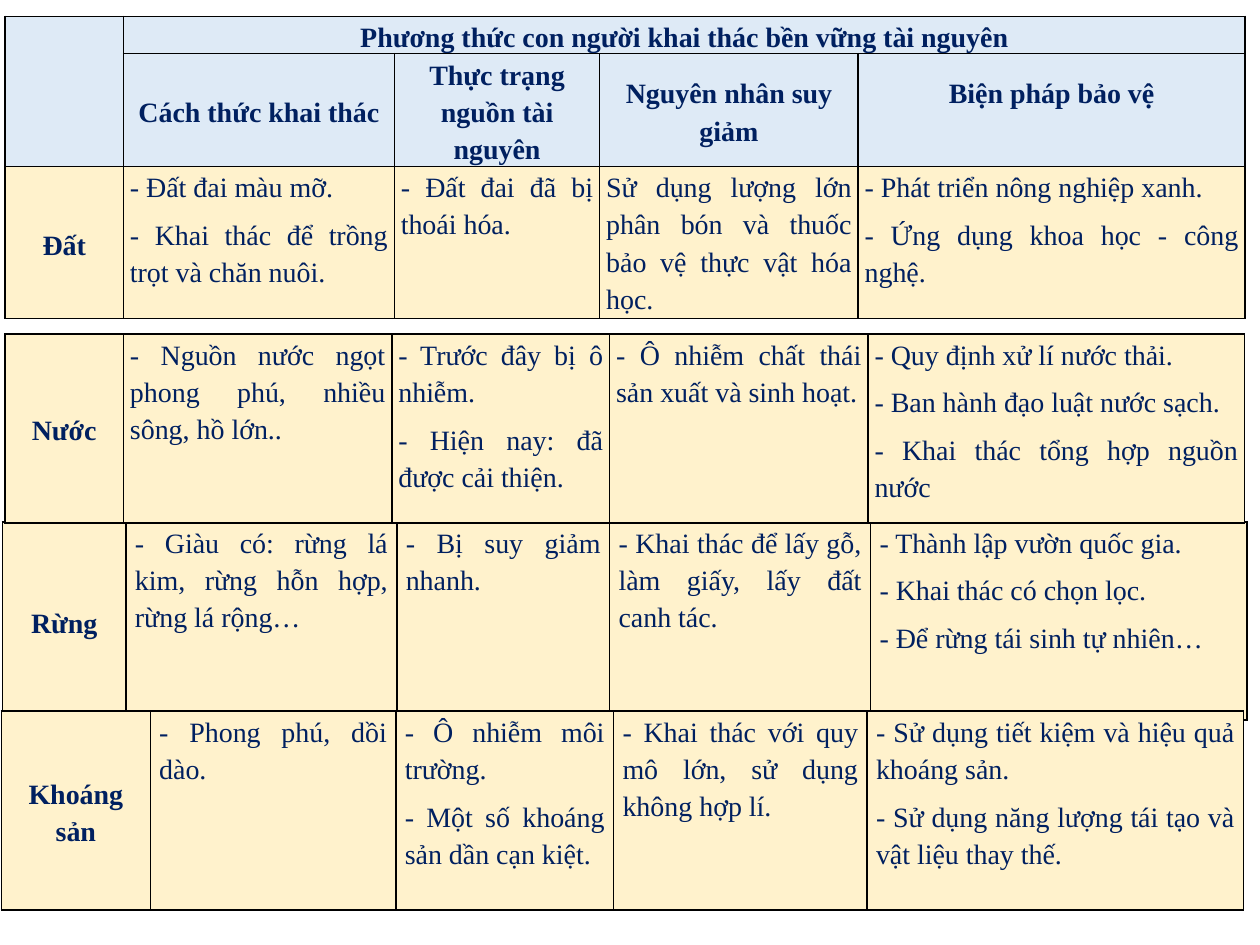
import pptx
import pptx.util
import pptx.dml.color
import pptx.enum.text
import pptx.oxml
import pptx.oxml.ns

Cm, Pt = pptx.util.Cm, pptx.util.Pt
ALIGN, ANCHOR = pptx.enum.text.PP_ALIGN, pptx.enum.text.MSO_ANCHOR
HEAD, BODY = "DEEAF6", "FFF2CC"
FONT = {"name": "Times New Roman", "size": Pt(16)}
PARA = {"line_spacing": 1.2, "space_before": Pt(6)}


def color(text):
    return pptx.dml.color.RGBColor.from_string(text)


def format_cell(cell, text, fill, strong, middle, inset):
    margins = {"margin_left": Cm(inset), "margin_right": Cm(inset), "margin_top": 0, "margin_bottom": 0}
    for name, value in margins.items():
        setattr(cell, name, value)
    cell.vertical_anchor = ANCHOR.MIDDLE if middle else ANCHOR.TOP
    tf = cell.text_frame
    tf.text = text
    for p in tf.paragraphs:
        p.alignment = ALIGN.CENTER if strong else ALIGN.JUSTIFY
        for name, value in PARA.items():
            setattr(p, name, value)
        p.font.size = FONT["size"]
        for r in p.runs:
            for name, value in {**FONT, "bold": strong}.items():
                setattr(r.font, name, value)
            r.font.color.rgb = color("002060")
    # Thin black borders come before the fill in the cell properties
    tcPr = cell._tc.get_or_add_tcPr()
    for side in ("lnL", "lnR", "lnT", "lnB"):
        tcPr.append(pptx.oxml.parse_xml(
            f'<a:{side} {pptx.oxml.ns.nsdecls("a")} w="12700"><a:solidFill>'
            f'<a:srgbClr val="000000"/></a:solidFill></a:{side}>'))
    cell.fill.solid()
    cell.fill.fore_color.rgb = color(fill)


prs = pptx.Presentation()
prs.slide_width, prs.slide_height = Cm(25.4), Cm(19.05)
s = prs.slides.add_slide(prs.slide_layouts[6])

# One table per resource; the first also carries the two header rows
tables = [
    {"at": (0.1, 0.33), "inset": 0.13, "header": 2,
     "cols": [2.39, 5.46, 4.14, 5.21, 7.8], "rows": [0.75, 2.27, 3.07],
     "text": [
         ["", "Phương thức con người khai thác bền vững tài nguyên", "", "", ""],
         ["", "Cách thức khai thác", "Thực trạng nguồn tài nguyên",
          "Nguyên nhân suy giảm", "Biện pháp bảo vệ"],
         ["Đất",
          "- Đất đai màu mỡ.\n- Khai thác để trồng trọt và chăn nuôi.",
          "- Đất đai đã bị thoái hóa.",
          "Sử dụng lượng lớn phân bón và thuốc bảo vệ thực vật hóa học.",
          "- Phát triển nông nghiệp xanh.\n- Ứng dụng khoa học - công nghệ."]]},
    {"at": (0.05, 10.52), "inset": 0.18, "header": 0,
     "cols": [2.49, 5.46, 4.29, 5.26, 7.59], "rows": [3.99],
     "text": [
         ["Rừng",
          "- Giàu có: rừng lá kim, rừng hỗn hợp, rừng lá rộng…",
          "- Bị suy giảm nhanh.",
          "- Khai thác để lấy gỗ, làm giấy, lấy đất canh tác.",
          "- Thành lập vườn quốc gia.\n- Khai thác có chọn lọc.\n- Để rừng tái sinh tự nhiên…"]]},
    {"at": (0.1, 6.73), "inset": 0.13, "header": 0,
     "cols": [2.39, 5.41, 4.39, 5.21, 7.59], "rows": [3.81],
     "text": [
         ["Nước",
          "- Nguồn nước ngọt phong phú, nhiều sông, hồ lớn..",
          "- Trước đây bị ô nhiễm.\n- Hiện nay: đã được cải thiện.",
          "- Ô nhiễm chất thái sản xuất và sinh hoạt.",
          "- Quy định xử lí nước thải.\n- Ban hành đạo luật nước sạch.\n"
          "- Khai thác tổng hợp nguồn nước"]]},
    {"at": (0.03, 14.33), "inset": 0.18, "header": 0,
     "cols": [3, 4.95, 4.39, 5.11, 7.59], "rows": [4.01],
     "text": [
         ["Khoáng sản",
          "- Phong phú, dồi dào.",
          "- Ô nhiễm môi trường.\n- Một số khoáng sản dần cạn kiệt.",
          "- Khai thác với quy mô lớn, sử dụng không hợp lí.",
          "- Sử dụng tiết kiệm và hiệu quả khoáng sản.\n"
          "- Sử dụng năng lượng tái tạo và vật liệu thay thế."]]},
]

for t in tables:
    left, top = t["at"]
    table = s.shapes.add_table(len(t["rows"]), len(t["cols"]), Cm(left), Cm(top),
                               Cm(sum(t["cols"])), Cm(sum(t["rows"]))).table
    table.first_row = table.horz_banding = False
    for col, width in zip(table.columns, t["cols"]):
        col.width = Cm(width)
    for row, height in zip(table.rows, t["rows"]):
        row.height = Cm(height)
    for i, line in enumerate(t["text"]):
        for j, text in enumerate(line):
            header = i < t["header"]
            strong = header or j == 0
            format_cell(table.cell(i, j), text, HEAD if header else BODY, strong,
                        strong and (i > 0 or not header), t["inset"])
    # Header: empty corner, title across the columns, last heading raised
    if t["header"]:
        table.cell(0, 0).merge(table.cell(1, 0))
        table.cell(0, 1).merge(table.cell(0, 4))
        table.cell(1, 4).margin_bottom = Cm(0.75)

prs.save("out.pptx")
